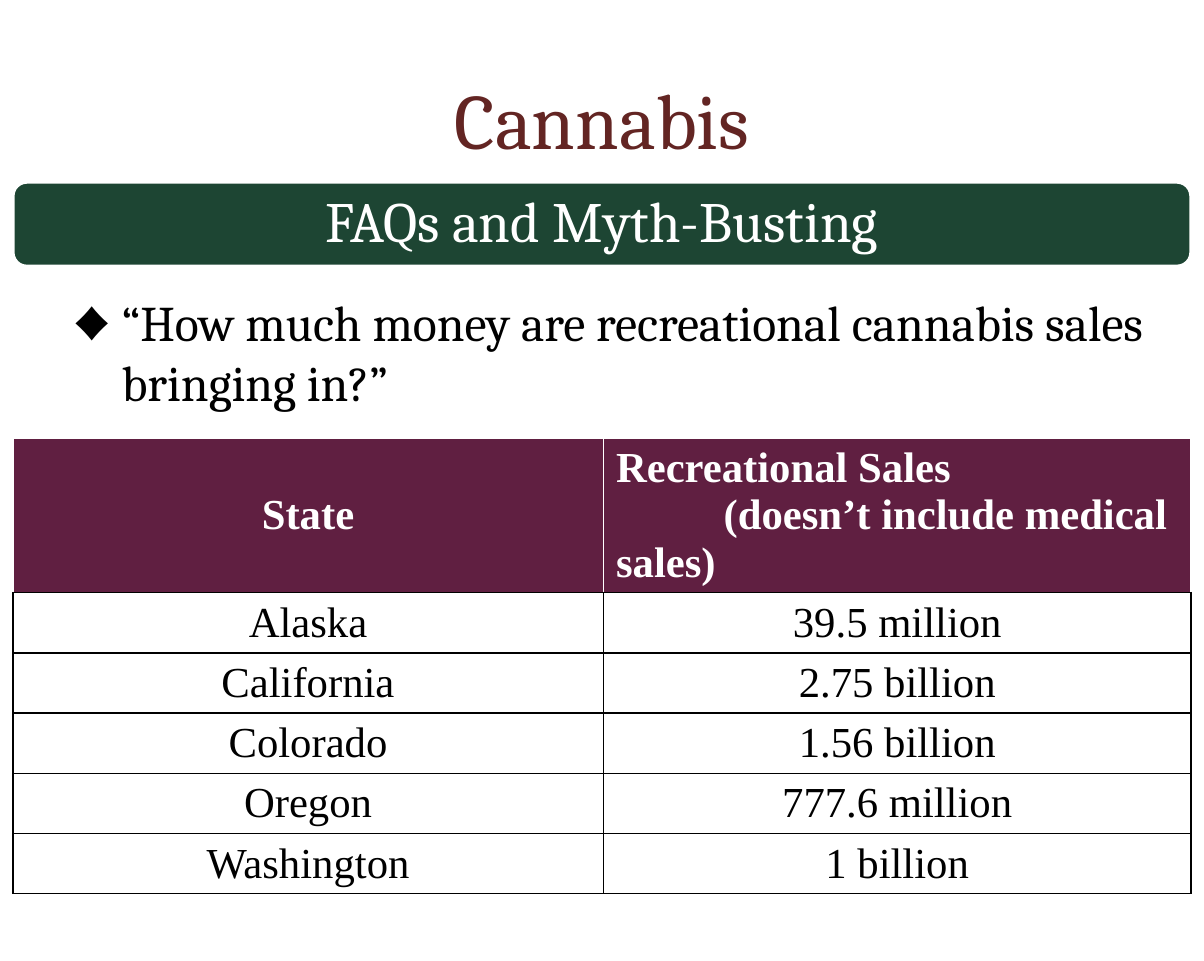
from dataclasses import dataclass

from lxml.etree import SubElement
from pptx import Presentation
from pptx.dml.color import RGBColor
from pptx.enum.shapes import MSO_SHAPE
from pptx.enum.text import MSO_ANCHOR, PP_ALIGN
from pptx.oxml.ns import qn
from pptx.slide import Slide
from pptx.table import _Cell
from pptx.text.text import TextFrame, _Paragraph
from pptx.util import Inches, Pt

COLOURS = {
    "title": "632523",
    "banner": "1D4533",
    "header": "601F41",
    "white": "FFFFFF",
    "black": "000000",
}
SERIF = "Cambria"
TABLE_FONT = "Times New Roman"
HEADER_HEIGHT, ROW_HEIGHT = 1.2, 0.47
COLUMN_WIDTHS = (4.61, 4.59)


@dataclass(frozen=True)
class StateSales:
    state: str
    sales: str


SALES = [
    StateSales("Alaska", "39.5 million"),
    StateSales("California", "2.75 billion"),
    StateSales("Colorado", "1.56 billion"),
    StateSales("Oregon", "777.6 million"),
    StateSales("Washington", "1 billion"),
]


def colour(name: str) -> RGBColor:
    return RGBColor.from_string(COLOURS[name])


def write(frame: TextFrame, text: str, *, size: float, font: str = SERIF,
          ink: str = "black", bold: bool = False,
          align: PP_ALIGN = PP_ALIGN.CENTER) -> list[_Paragraph]:
    """Fill the frame with one paragraph per line of text."""
    frame.text = text
    frame.word_wrap = True
    for paragraph in frame.paragraphs:
        paragraph.alignment = align
        paragraph.space_before = Pt(0)
        for span in paragraph.runs:
            span.font.name = font
            span.font.size = Pt(size)
            span.font.bold = bold
            span.font.color.rgb = colour(ink)
    return list(frame.paragraphs)


def place(box, left: float, top: float, width: float, height: float) -> None:
    box.left, box.top = Inches(left), Inches(top)
    box.width, box.height = Inches(width), Inches(height)


def add_bullet(paragraph: _Paragraph, symbol: str, indent: float) -> None:
    properties = paragraph._p.get_or_add_pPr()
    properties.set("marL", str(Inches(indent)))
    properties.set("indent", str(-Inches(indent)))
    SubElement(properties, qn("a:buSzPct"), val="75000")
    SubElement(properties, qn("a:buFont"), typeface=SERIF)
    SubElement(properties, qn("a:buChar"), char=symbol)


def set_borders(cell: _Cell, left: str, right: str, top: str, bottom: str) -> None:
    properties = cell._tc.get_or_add_tcPr()
    sides = {"a:lnL": left, "a:lnR": right, "a:lnT": top, "a:lnB": bottom}
    for tag, name in sides.items():
        line = SubElement(properties, qn(tag), w=str(Pt(1)))
        fill = SubElement(line, qn("a:solidFill"))
        SubElement(fill, qn("a:srgbClr"), val=COLOURS[name])


def add_titles(page: Slide) -> None:
    title = page.shapes.title
    place(title, 0.47, 0.3, 8.46, 1.25)
    write(title.text_frame, "Cannabis", size=44, ink="title")
    title.text_frame.vertical_anchor = MSO_ANCHOR.MIDDLE

    banner = page.shapes.add_shape(MSO_SHAPE.ROUNDED_RECTANGLE, Inches(0.1),
                                   Inches(1.42), Inches(9.2), Inches(0.66))
    banner.shadow.inherit = False
    banner.fill.solid()
    banner.fill.fore_color.rgb = colour("banner")
    banner.line.color.rgb = colour("white")
    banner.line.width = Pt(2)
    heading, = write(banner.text_frame, "FAQs and Myth-Busting", size=32, ink="white")
    heading.line_spacing = 0.9
    banner.text_frame.vertical_anchor = MSO_ANCHOR.MIDDLE


def add_question(page: Slide) -> None:
    body = page.placeholders[1]
    place(body, 0.47, 2.23, 8.73, 4.95)
    question, = write(
        body.text_frame,
        "“How much money are recreational cannabis sales bringing in?”",
        size=28, align=PP_ALIGN.LEFT)
    add_bullet(question, "♦", 0.38)


def add_sales_table(page: Slide) -> None:
    height = HEADER_HEIGHT + ROW_HEIGHT * len(SALES)
    table = page.shapes.add_table(len(SALES) + 1, len(COLUMN_WIDTHS), Inches(0.1),
                                  Inches(3.42), Inches(sum(COLUMN_WIDTHS)),
                                  Inches(height)).table
    table.horz_banding = False
    for column, width in zip(table.columns, COLUMN_WIDTHS):
        column.width = Inches(width)
    for row in table.rows:
        row.height = Inches(ROW_HEIGHT)
    table.rows[0].height = Inches(HEADER_HEIGHT)

    for cell in table.iter_cells():
        cell.vertical_anchor = MSO_ANCHOR.MIDDLE
    headings = ("State", "Recreational Sales\n(doesn’t include medical sales)")
    alignments = (PP_ALIGN.CENTER, PP_ALIGN.LEFT)
    for cell, text, align in zip(table.rows[0].cells, headings, alignments):
        set_borders(cell, "white", "white", "white", "black")
        cell.fill.solid()
        cell.fill.fore_color.rgb = colour("header")
        lines = write(cell.text_frame, text, size=24, font=TABLE_FONT,
                      ink="white", bold=True, align=align)
        for remark in lines[1:]:
            remark._p.get_or_add_pPr().set("indent", str(Inches(0.84)))

    for number, record in enumerate(SALES, start=1):
        for cell, text in zip(table.rows[number].cells, (record.state, record.sales)):
            set_borders(cell, "black", "black", "black", "black")
            cell.fill.background()
            write(cell.text_frame, text, size=24, font=TABLE_FONT)


def main() -> None:
    deck = Presentation()
    deck.slide_width, deck.slide_height = Inches(9.4), Inches(7.5)
    page = deck.slides.add_slide(deck.slide_layouts[1])
    add_titles(page)
    add_question(page)
    add_sales_table(page)
    deck.save("out.pptx")


if __name__ == "__main__":
    main()
